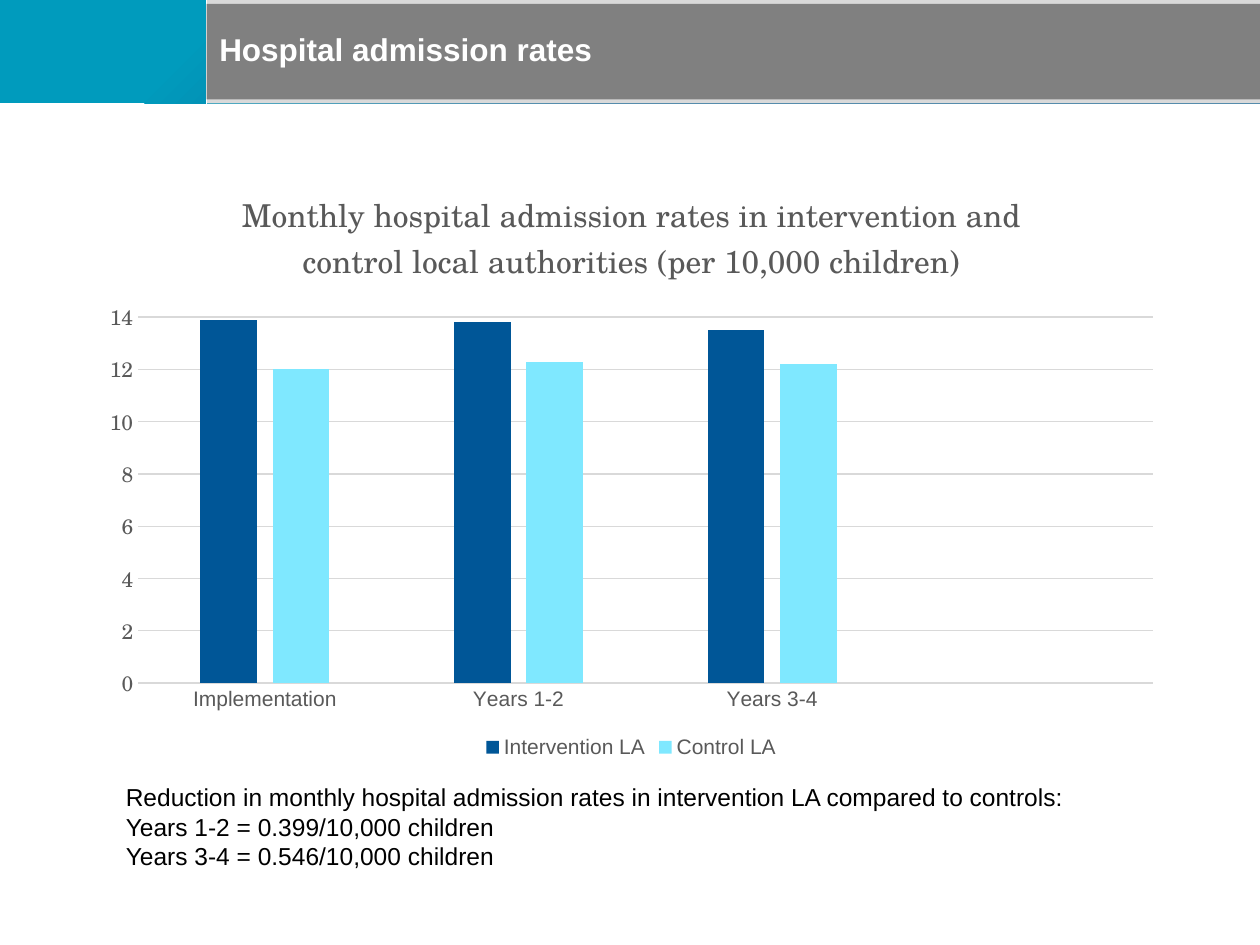
from pptx import Presentation
from pptx.chart.data import CategoryChartData
from pptx.dml.color import RGBColor
from pptx.enum import chart as charts, shapes, text
from pptx.oxml import parse_xml
from pptx.oxml.ns import nsdecls
from pptx.util import Inches, Pt


def rgb(value):
    return RGBColor.from_string(value)


def style(font, size, color, name="Arial", bold=False):
    font.size, font.name, font.bold = Pt(size), name, bold
    font.color.rgb = rgb(color)


prs = Presentation()
prs.slide_width, prs.slide_height = Inches(10), Inches(7.5)
slide = prs.slides.add_slide(prs.slide_layouts[5])
tree = slide.shapes
split, header_height = Inches(1.64), Inches(0.82)

# Header band: gradient behind, light grey strip over it
accent = tree.add_shape(shapes.MSO_SHAPE.RECTANGLE, 0, 0, prs.slide_width, header_height)
accent.fill.gradient()
accent.fill.gradient_angle = 315
for stop, (position, color) in zip(accent.fill.gradient_stops, [(0.17, "009BBD"), (0.5, "0E6394")]):
    stop.position = position
    stop.color.rgb = rgb(color)
strip = tree.add_shape(shapes.MSO_SHAPE.RECTANGLE, split, 0, prs.slide_width - split, header_height)
strip.fill.solid()
strip.fill.fore_color.rgb = rgb("D9D9D9")
for band in (accent, strip):
    band.line.fill.background()
    band.shadow.inherit = False

divider = tree.add_connector(shapes.MSO_CONNECTOR.STRAIGHT, split, 0, split, Inches(0.98))
divider.line.color.rgb = rgb("FFFFFF")
divider.line.width = Pt(0.5)
divider._element.spPr.append(parse_xml(f"<a:effectLst {nsdecls('a')}/>"))

# Slide title, brought in front of the band
title = tree.title
tree._spTree.append(title._element)
title.left, title.top = split, Inches(0.03)
title.width, title.height = prs.slide_width - split, Inches(0.76)
title.fill.solid()
title.fill.fore_color.rgb = rgb("808080")
title.text_frame.vertical_anchor = text.MSO_ANCHOR.MIDDLE
heading = title.text_frame.paragraphs[0]
heading.alignment = text.PP_ALIGN.LEFT
heading.line_spacing = 0.9
run = heading.add_run()
run.text = "Hospital admission rates"
style(run.font, 18, "FFFFFF", bold=True)

# Admission rates, with an empty fourth category
rates = CategoryChartData()
rates.categories = ["Implementation", "Years 1-2", "Years 3-4", ""]
rates.add_series("Intervention LA", [13.9, 13.8, 13.5, None])
rates.add_series("Control LA", [12, 12.3, 12.2, None])
chart = tree.add_chart(charts.XL_CHART_TYPE.COLUMN_CLUSTERED, Inches(0.7), Inches(1.3),
                       Inches(8.62), Inches(4.76), rates).chart
style(chart.font, 10, "000000", "TeX Gyre Schola")

chart.has_title = True
run = chart.chart_title.text_frame.paragraphs[0].add_run()
run.text = ("Monthly hospital admission rates in intervention and "
            "control local authorities (per 10,000 children)")
style(run.font, 18, "595959", "TeX Gyre Schola")
chart.chart_title.include_in_layout = False

chart.has_legend = True
chart.legend.position = charts.XL_LEGEND_POSITION.BOTTOM
chart.legend.include_in_layout = False
style(chart.legend.font, 12, "595959")

plot = chart.plots[0]
plot.gap_width, plot.overlap, plot.vary_by_categories = 219, -27, False
for series, color in zip(plot.series, ["005697", "7FE8FF"]):
    series.format.fill.solid()
    series.format.fill.fore_color.rgb = rgb(color)
    series.invert_if_negative = False

periods, scale = chart.category_axis, chart.value_axis
for axis, font in [(periods, "Arial"), (scale, "TeX Gyre Schola")]:
    axis.major_tick_mark = axis.minor_tick_mark = charts.XL_TICK_MARK.NONE
    style(axis.tick_labels.font, 12, "595959", font)
scale.minimum_scale, scale.maximum_scale, scale.major_unit = 0, 14.5, 2
scale.format.line.fill.background()
for line in (periods.format.line, scale.major_gridlines.format.line):
    line.color.rgb = rgb("D9D9D9")
    line.width = Pt(0.75)

# Fixed plot area inside the chart
plot_area = chart._chartSpace.chart.plotArea
for old in plot_area.xpath("c:layout"):
    plot_area.remove(old)
plot_area.insert(0, parse_xml(
    f'<c:layout {nsdecls("c")}><c:manualLayout><c:layoutTarget val="inner"/>'
    '<c:xMode val="edge"/><c:yMode val="edge"/><c:x val="0.046"/><c:y val="0.234"/>'
    '<c:w val="0.934"/><c:h val="0.632"/></c:manualLayout></c:layout>'))

# Findings below the chart
findings = tree.add_textbox(Inches(0.9), Inches(6.16), Inches(8.52), Inches(0.81)).text_frame
findings.word_wrap = True
for i, finding in enumerate([
    "Reduction in monthly hospital admission rates in intervention LA compared to controls:",
    "Years 1-2 = 0.399/10,000 children",
    "Years 3-4 = 0.546/10,000 children",
]):
    paragraph = findings.add_paragraph() if i else findings.paragraphs[0]
    run = paragraph.add_run()
    run.text = finding
    style(run.font, 14, "000000")

prs.save("out.pptx")
